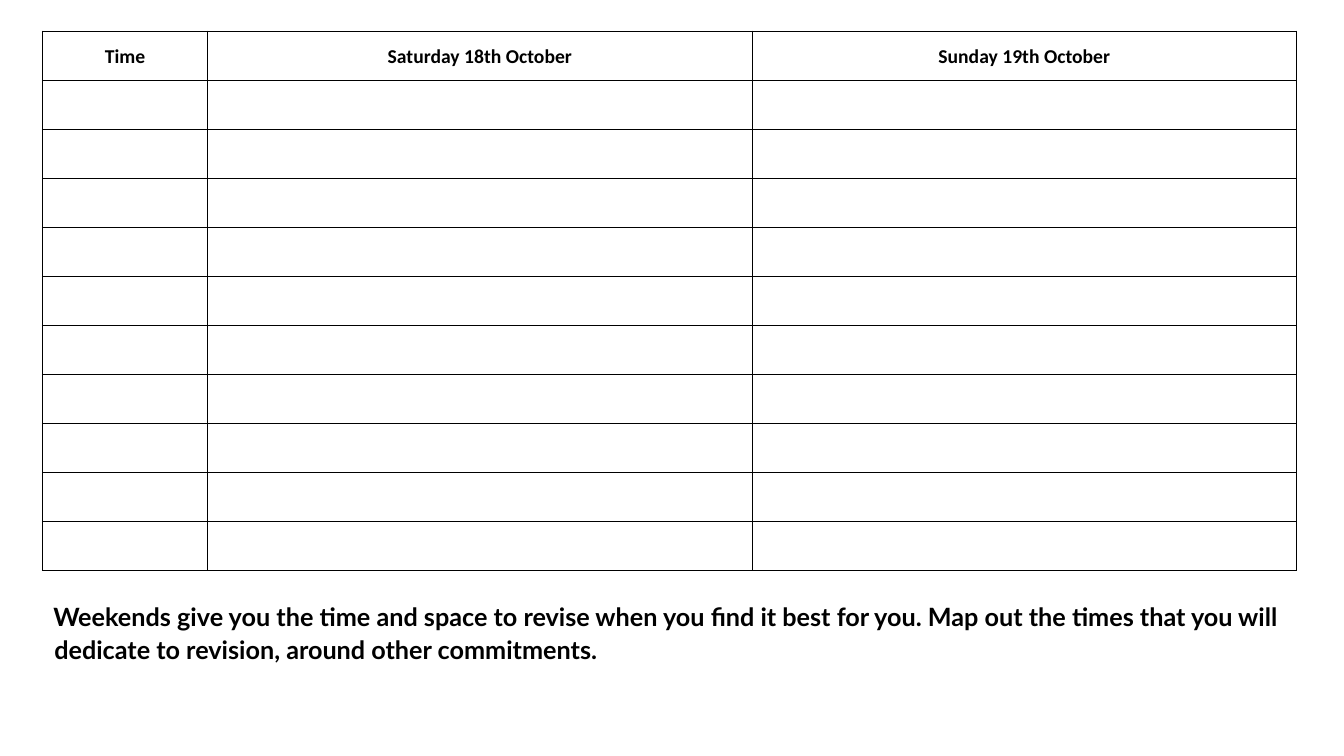
from dataclasses import dataclass

from lxml.etree import SubElement
from pptx import Presentation
from pptx.dml.color import RGBColor as Color
from pptx.enum.text import MSO_ANCHOR as Anchor, MSO_AUTO_SIZE as AutoSize, PP_ALIGN as Align
from pptx.oxml.ns import qn
from pptx.slide import Slide
from pptx.table import _Cell as Cell
from pptx.text.text import _Paragraph as Paragraph
from pptx.util import Inches, Pt


@dataclass(frozen=True)
class Theme:
    ink: str = "000000"
    paper: str = "FFFFFF"
    header_font: str = "Calibri"
    header_size: int = 14
    advice_font: str = "Lato"
    advice_size: int = 18
    line_spacing: float = 1.07
    border_width: int = 1


@dataclass(frozen=True)
class PlannerColumn:
    heading: str
    width: float


THEME = Theme()
COLUMNS = (
    PlannerColumn("Time", 1.64),
    PlannerColumn("Saturday 18th October", 5.4),
    PlannerColumn("Sunday 19th October", 5.4),
)
SLOTS = 10
ADVICE = (
    "Weekends give you the time and space to revise when you find it best for you. "
    "Map out the times that you will dedicate to revision, around other commitments."
)


def style_paragraph(paragraph: Paragraph, font_name: str, size: int, space_after: float) -> None:
    """Apply bold text and paragraph spacing."""
    paragraph.line_spacing = THEME.line_spacing
    paragraph.space_after = Pt(space_after)
    for run in paragraph.runs:
        run.font.name = font_name
        run.font.size = Pt(size)
        run.font.bold = True
        run.font.color.rgb = Color.from_string(THEME.ink)


def style_cell(cell: Cell) -> None:
    """Give a cell its four borders and plain fill."""
    properties = cell._tc.get_or_add_tcPr()
    for side in ("a:lnL", "a:lnR", "a:lnT", "a:lnB"):
        border = SubElement(properties, qn(side), w=str(Pt(THEME.border_width)))
        SubElement(SubElement(border, qn("a:solidFill")), qn("a:srgbClr"), val=THEME.ink)
    cell.fill.solid()
    cell.fill.fore_color.rgb = Color.from_string(THEME.paper)


def write_heading(cell: Cell, heading: str) -> None:
    """Write a centred column heading."""
    cell.margin_left = cell.margin_right = Inches(0.06)
    cell.margin_top = cell.margin_bottom = 0
    cell.vertical_anchor = Anchor.MIDDLE
    cell.text_frame.text = heading
    paragraph = cell.text_frame.paragraphs[0]
    paragraph.alignment = Align.CENTER
    style_paragraph(paragraph, THEME.header_font, THEME.header_size, 8)


def draw_planner(slide: Slide) -> None:
    """Draw the weekend timetable."""
    planner = slide.shapes.add_table(
        SLOTS + 1, len(COLUMNS), Inches(0.42), Inches(0.31), Inches(12.44), Inches(5.35)
    ).table
    planner.first_row = planner.horz_banding = False
    for cell in planner.iter_cells():
        style_cell(cell)
    for index, column in enumerate(COLUMNS):
        planner.columns[index].width = Inches(column.width)
        write_heading(planner.cell(0, index), column.heading)


def draw_advice(slide: Slide) -> None:
    """Draw the revision advice below the timetable."""
    advice = slide.shapes.add_textbox(Inches(-0.25), Inches(5.9), Inches(13.09), Inches(0.74)).text_frame
    advice.word_wrap = True
    advice.auto_size = AutoSize.SHAPE_TO_FIT_TEXT
    advice.text = ADVICE
    paragraph = advice.paragraphs[0]
    indents = paragraph._p.get_or_add_pPr()
    indents.set("marL", str(Inches(0.69)))
    indents.set("indent", str(Inches(-0.01)))
    style_paragraph(paragraph, THEME.advice_font, THEME.advice_size, 0.1)


def main() -> None:
    """Build and save the weekend planner."""
    presentation = Presentation()
    presentation.slide_width = Inches(13.33)
    presentation.slide_height = Inches(7.5)
    slide = presentation.slides.add_slide(presentation.slide_layouts[6])
    draw_planner(slide)
    draw_advice(slide)
    presentation.save("out.pptx")


if __name__ == "__main__":
    main()
